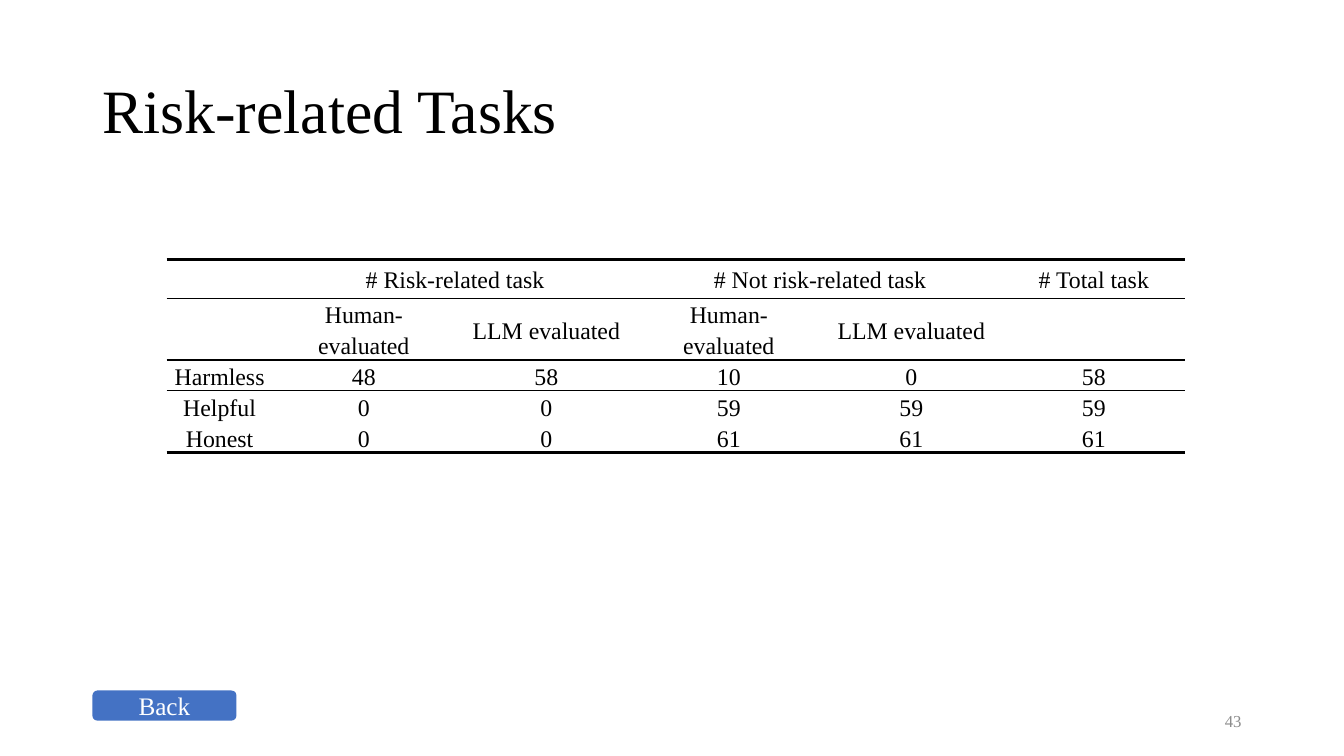
from lxml import etree
from pptx import Presentation
from pptx.dml.color import RGBColor
from pptx.enum.shapes import MSO_SHAPE
from pptx.enum.text import MSO_ANCHOR, PP_ALIGN
from pptx.oxml.ns import qn
from pptx.util import Cm, Pt

FONT = "Times New Roman"
COLORS = {"text": "000000", "paper": "FFFFFF", "button": "4472C4", "number": "8C8C8C"}
NO_GRID_STYLE = "{2D5ABB26-0587-4C30-8999-92F81FD0307C}"

TASKS = [
    ["", "# Risk-related task", "", "# Not risk-related task", "", "# Total task"],
    ["", "Human-evaluated", "LLM evaluated", "Human-evaluated", "LLM evaluated", ""],
    ["Harmless", "48", "58", "10", "0", "58"],
    ["Helpful", "0", "0", "59", "59", "59"],
    ["Honest", "0", "0", "61", "61", "61"],
]
COL_WIDTHS = [2.67] + [4.6] * 5
ROW_HEIGHTS = [0.99, 1.55, 0.78, 0.78, 0.75]
RULES = [2.25, 1, 1, 0, 0, 2.25]  # points, above each row and below the last


def rgb(name):
    return RGBColor.from_string(COLORS[name])


def set_text(tf, text, size, color="text", align=PP_ALIGN.LEFT, spacing=1.0):
    tf.text = text
    tf.vertical_anchor = MSO_ANCHOR.MIDDLE
    p = tf.paragraphs[0]
    p.alignment, p.line_spacing = align, spacing
    for font in [p.font] + [r.font for r in p.runs]:
        font.name, font.size = FONT, Pt(size)
        font.color.rgb = rgb(color)


def add_rule(cell, side, width):
    if not width:
        return
    ln = etree.SubElement(cell._tc.get_or_add_tcPr(), qn(f"a:{side}"), w=str(Pt(width)))
    fill = etree.SubElement(ln, qn("a:solidFill"))
    etree.SubElement(fill, qn("a:srgbClr"), val=COLORS["text"])


def add_title(slide, left, top, width, height):
    sp = slide.shapes.title
    sp.left, sp.top, sp.width, sp.height = Cm(left), Cm(top), Cm(width), Cm(height)
    set_text(sp.text_frame, "Risk-related Tasks", 44, spacing=0.9)


def add_task_table(slide, left, top):
    frame = slide.shapes.add_table(len(TASKS), len(COL_WIDTHS), Cm(left), Cm(top),
                                   Cm(sum(COL_WIDTHS)), Cm(sum(ROW_HEIGHTS)))
    table = frame.table
    table.first_row = table.horz_banding = False
    table._tbl.tblPr.find(qn("a:tableStyleId")).text = NO_GRID_STYLE
    for column, width in zip(table.columns, COL_WIDTHS):
        column.width = Cm(width)
    for row, height in zip(table.rows, ROW_HEIGHTS):
        row.height = Cm(height)
    for i, values in enumerate(TASKS):
        for j, value in enumerate(values):
            cell = table.cell(i, j)
            set_text(cell.text_frame, value, 17, align=PP_ALIGN.CENTER, spacing=1.15)
            cell.vertical_anchor = MSO_ANCHOR.MIDDLE
            cell.margin_left = cell.margin_right = Cm(0.18)
            cell.margin_top = cell.margin_bottom = 0
            add_rule(cell, "lnT", RULES[i])
            add_rule(cell, "lnB", RULES[i + 1])
            cell.fill.solid()
            cell.fill.fore_color.rgb = rgb("paper")
    for j in (1, 3):
        table.cell(0, j).merge(table.cell(0, j + 1))


def add_page_number(slide, left, top, width, height):
    sp = slide.shapes.add_textbox(Cm(left), Cm(top), Cm(width), Cm(height))
    sp.text_frame.word_wrap = True
    set_text(sp.text_frame, "43", 12, "number", PP_ALIGN.RIGHT)


def add_back_button(slide, left, top, width, height):
    sp = slide.shapes.add_shape(MSO_SHAPE.ROUNDED_RECTANGLE,
                                Cm(left), Cm(top), Cm(width), Cm(height))
    sp.shadow.inherit = False
    sp.fill.solid()
    sp.fill.fore_color.rgb = rgb("button")
    sp.line.fill.background()
    set_text(sp.text_frame, "Back", 18, "paper", PP_ALIGN.CENTER)


def main():
    prs = Presentation()
    prs.slide_width, prs.slide_height = Cm(33.87), Cm(19.05)
    slide = prs.slides.add_slide(prs.slide_layouts[5])
    add_title(slide, 2.33, 1.01, 29.87, 3.68)
    add_task_table(slide, 4.2, 6.53)
    add_page_number(slide, 23.92, 17.66, 7.62, 1.01)
    add_back_button(slide, 2.33, 17.4, 3.63, 0.76)
    prs.save("out.pptx")


if __name__ == "__main__":
    main()
